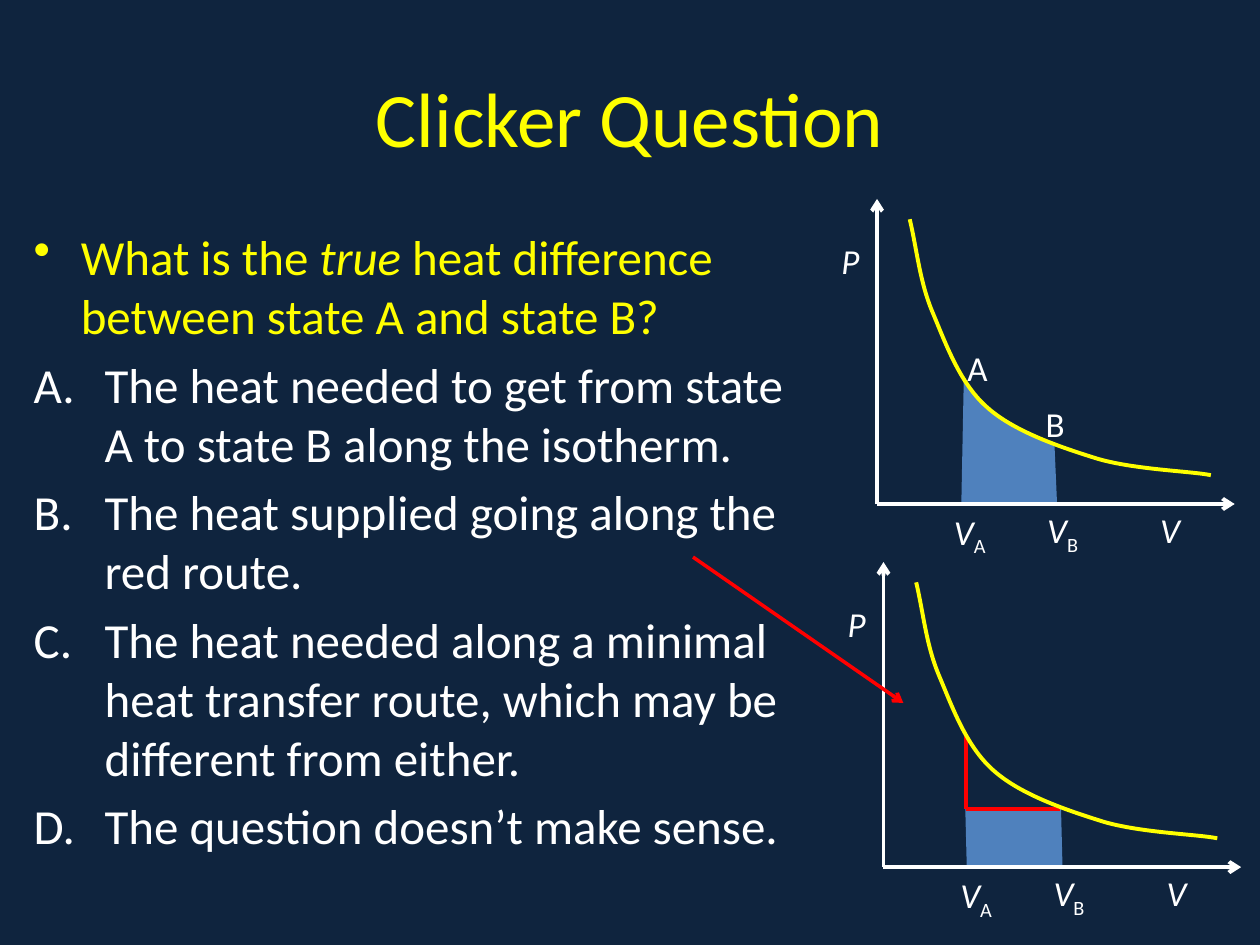
"""Build a quiz slide with two pressure-volume diagrams."""
from dataclasses import dataclass

from lxml import etree
from pptx import Presentation
from pptx.dml.color import RGBColor
from pptx.enum.shapes import MSO_CONNECTOR
from pptx.enum.text import MSO_ANCHOR, PP_ALIGN
from pptx.oxml.ns import qn
from pptx.util import Cm, Pt

STRAIGHT = MSO_CONNECTOR.STRAIGHT
MIDDLE = MSO_ANCHOR.MIDDLE
CENTER = PP_ALIGN.CENTER

NAVY = RGBColor(0x0F, 0x24, 0x3E)
YELLOW = RGBColor(0xFF, 0xFF, 0x00)
WHITE = RGBColor(0xFF, 0xFF, 0xFF)
RED = RGBColor(0xFF, 0x00, 0x00)
BLUE = RGBColor(0x4F, 0x81, 0xBD)
FONT = "Calibri"

Point = tuple[float, float]


@dataclass(frozen=True)
class Label:
    text: str
    left: float
    top: float
    subscript: str = ""
    italic: bool = True


@dataclass(frozen=True)
class Diagram:
    origin: Point
    area: tuple[Point, ...]
    route: tuple[Point, ...] = ()
    state_labels: tuple[Label, ...] = ()

    def place(self, point: Point) -> Point:
        return self.origin[0] + point[0], self.origin[1] + point[1]


AXIS_ENDS = ((7.21, 0), (0, -6.15))
AXIS_LABELS = (
    Label("P", -0.97, -5.46),
    Label("V", 5.46, -0.03),
    Label("V", 1.3, 0, "A"),
    Label("V", 3.18, -0.03, "B"),
)
ISOTHERM = (
    (0.66, -5.74),
    (0.81, -5.11), (0.86, -4.47), (1.13, -3.84),
    (1.4, -3.2), (1.68, -2.41), (2.24, -1.93),
    (2.79, -1.45), (3.71, -1.14), (4.45, -0.91),
    (5.21, -0.69), (6.35, -0.66), (6.73, -0.58),
)
DIAGRAMS = (
    Diagram(
        (17.68, 10.16),
        ((1.7, 0), (1.75, -2.54), (2.18, -1.93), (2.82, -1.5), (3.58, -1.17), (3.63, 0)),
        state_labels=(
            Label("A", 1.57, -3.3, italic=False),
            Label("B", 3.15, -2.18, italic=False),
        ),
    ),
    Diagram(
        (17.81, 17.48),
        ((1.68, 0), (1.65, -1.17), (3.58, -1.17), (3.61, 0)),
        route=((1.66, -2.67), (1.66, -1.17), (3.56, -1.17)),
    ),
)
QUESTION = (("What is the ", False), ("true", True),
            (" heat difference between state A and state B?", False))
ANSWERS = (
    "The heat needed to get from state A to state B along the isotherm.",
    "The heat supplied going along the red route.",
    "The heat needed along a minimal heat transfer route, which may be different from either.",
    "The question doesn’t make sense.",
)


def add_line(slide, start: Point, end: Point, color: RGBColor, width: float,
             arrow: bool = False) -> None:
    line = slide.shapes.add_connector(STRAIGHT, *map(Cm, start + end))
    line.line.color.rgb = color
    line.line.width = Pt(width)
    if arrow:
        etree.SubElement(line.line._get_or_add_ln(), qn("a:tailEnd"), type="arrow")
    etree.SubElement(line._element.spPr, qn("a:effectLst"))


def add_outline(slide, points: list[Point], close: bool):
    start, *rest = [(Cm(x), Cm(y)) for x, y in points]
    builder = slide.shapes.build_freeform(*start, scale=1.0)
    builder.add_line_segments(rest, close=close)
    shape = builder.convert_to_shape()
    shape.shadow.inherit = False
    return shape


def add_area(slide, points: list[Point]) -> None:
    shape = add_outline(slide, points, close=True)
    shape.fill.solid()
    shape.fill.fore_color.rgb = BLUE
    shape.line.fill.background()


def add_curve(slide, points: list[Point]) -> None:
    shape = add_outline(slide, points, close=False)
    shape.fill.background()
    shape.line.color.rgb = YELLOW
    shape.line.width = Pt(2.25)
    path_element = next(shape._element.iter(qn("a:path")))
    segments = path_element.findall(qn("a:lnTo"))
    for first in range(0, len(segments), 3):
        bezier = etree.SubElement(path_element, qn("a:cubicBezTo"))
        for segment in segments[first:first + 3]:
            bezier.append(segment[0])
            path_element.remove(segment)


def add_label(slide, label: Label, position: Point) -> None:
    box = slide.shapes.add_textbox(*map(Cm, position), Cm(1.7), Cm(1.11))
    box.text_frame.word_wrap = True
    paragraph = box.text_frame.paragraphs[0]
    paragraph.font.name = FONT
    paragraph.font.size = Pt(20)
    paragraph.font.color.rgb = WHITE
    run = paragraph.add_run()
    run.text = label.text
    run.font.italic = label.italic
    if label.subscript:
        subscript = paragraph.add_run()
        subscript.text = label.subscript
        subscript._r.get_or_add_rPr().set("baseline", "-25000")


def add_diagram(slide, diagram: Diagram) -> None:
    add_area(slide, [diagram.place(point) for point in diagram.area])
    for start, end in zip(diagram.route, diagram.route[1:]):
        add_line(slide, diagram.place(start), diagram.place(end), RED, 2)
    for end in AXIS_ENDS:
        add_line(slide, diagram.origin, diagram.place(end), WHITE, 2.25, arrow=True)
    add_curve(slide, [diagram.place(point) for point in ISOTHERM])
    for label in AXIS_LABELS + diagram.state_labels:
        add_label(slide, label, diagram.place((label.left, label.top)))


def format_item(paragraph, color: RGBColor, indent: float, bullet: str, **attributes: str) -> None:
    paragraph.font.name = FONT
    paragraph.font.size = Pt(28)
    paragraph.font.color.rgb = color
    paragraph.space_before = Pt(5.6)
    properties = paragraph._p.get_or_add_pPr()
    properties.set("marL", str(Cm(indent)))
    properties.set("indent", str(-Cm(indent)))
    marker = etree.Element(qn(bullet), **attributes)
    properties.find(qn("a:defRPr")).addprevious(marker)


def add_title(slide) -> None:
    title = slide.shapes.title
    title.left, title.top, title.width, title.height = map(Cm, (1.27, 0.76, 22.86, 3.18))
    title.text_frame.text = "Clicker Question"
    title.text_frame.vertical_anchor = MIDDLE
    paragraph = title.text_frame.paragraphs[0]
    paragraph.alignment = CENTER
    paragraph.font.name = FONT
    paragraph.font.size = Pt(44)
    paragraph.font.color.rgb = YELLOW


def add_question(slide) -> None:
    box = slide.shapes.add_textbox(*map(Cm, (0.43, 4.45, 15.88, 14.6)))
    frame = box.text_frame
    frame.word_wrap = True
    paragraph = frame.paragraphs[0]
    for text, italic in QUESTION:
        run = paragraph.add_run()
        run.text = text
        run.font.italic = italic
    format_item(paragraph, YELLOW, 0.95, "a:buChar", char="•")
    for answer in ANSWERS:
        paragraph = frame.add_paragraph()
        paragraph.text = answer
        format_item(paragraph, WHITE, 1.43, "a:buAutoNum", type="alphaUcPeriod")


def main() -> None:
    presentation = Presentation()
    presentation.slide_width, presentation.slide_height = Cm(25.4), Cm(19.05)
    slide = presentation.slides.add_slide(presentation.slide_layouts[5])
    slide.background.fill.solid()
    slide.background.fill.fore_color.rgb = NAVY
    add_title(slide)
    add_question(slide)
    for diagram in DIAGRAMS:
        add_diagram(slide, diagram)
    add_line(slide, (13.97, 11.23), (18.21, 14.17), RED, 2, arrow=True)
    presentation.save("out.pptx")


if __name__ == "__main__":
    main()
